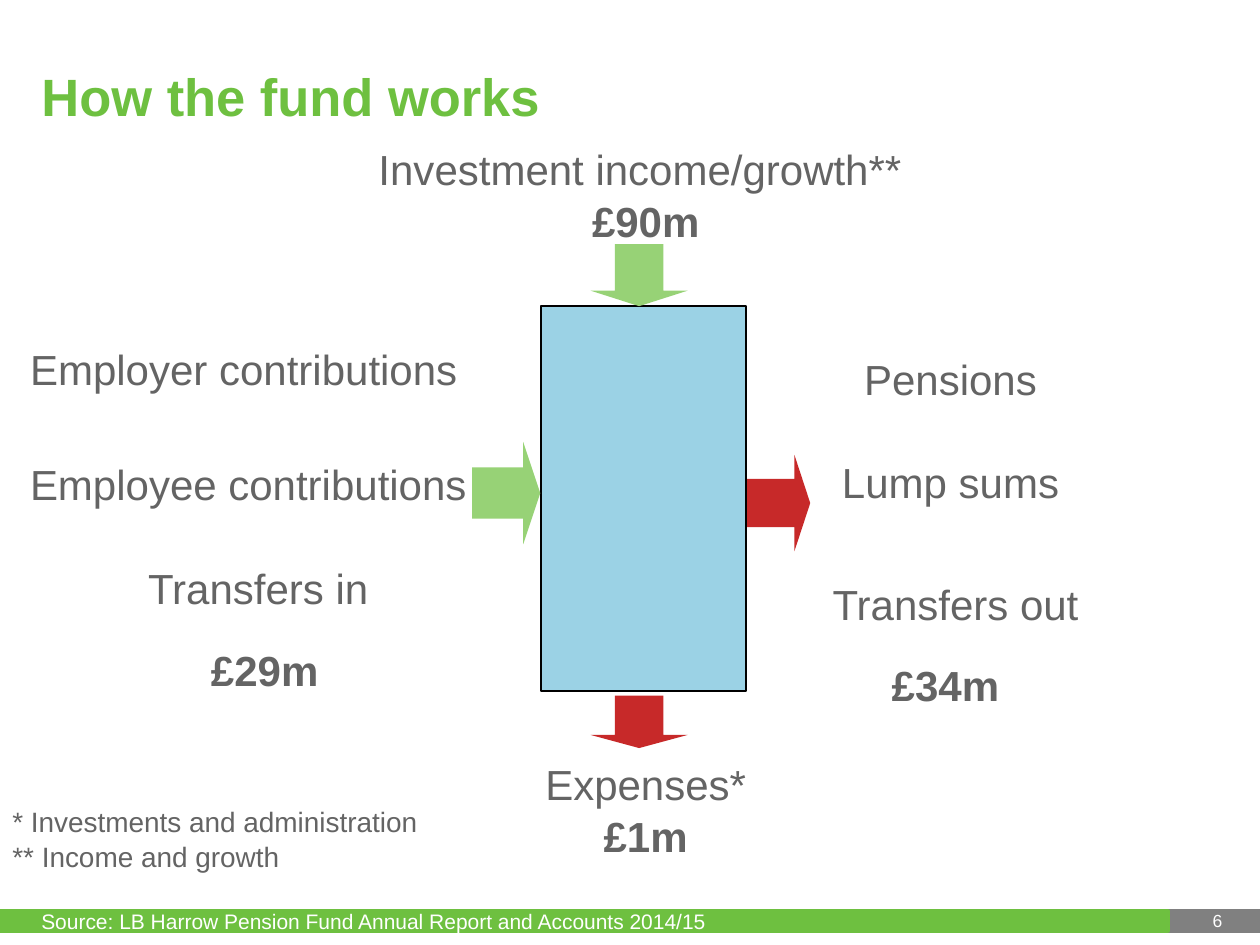
from dataclasses import dataclass

from lxml.etree import SubElement
from pptx import Presentation
from pptx.dml.color import RGBColor
from pptx.enum.shapes import MSO_SHAPE
from pptx.enum.text import MSO_ANCHOR, PP_ALIGN
from pptx.util import Pt


@dataclass(frozen=True)
class Theme:
    font: str = "Arial"
    green: str = "6EC040"
    inflow: str = "97D276"
    outflow: str = "C72929"
    fund: str = "9BD2E5"
    grey: str = "808080"
    text: str = "646464"
    white: str = "FFFFFF"
    black: str = "000000"
    title_size: int = 30
    label_size: int = 24
    note_size: int = 16
    source_size: int = 12
    number_size: int = 10


class FundSlide:
    def __init__(self, deck, theme):
        self.theme = theme
        self.slide = deck.slides.add_slide(deck.slide_layouts[5])

    def style(self, paragraph, size, color, bold=False):
        paragraph.font.name = self.theme.font
        paragraph.font.size = Pt(size)
        paragraph.font.bold = bold
        paragraph.font.color.rgb = RGBColor.from_string(color)

    def title(self, words, left, top, width, height):
        heading = self.slide.shapes.title
        heading.left, heading.top = Pt(left), Pt(top)
        heading.width, heading.height = Pt(width), Pt(height)
        heading.text_frame.text = words
        heading.text_frame.vertical_anchor = MSO_ANCHOR.MIDDLE
        paragraph = heading.text_frame.paragraphs[0]
        paragraph.alignment = PP_ALIGN.LEFT
        self.style(paragraph, self.theme.title_size, self.theme.green, True)

    def block(self, preset, left, top, width, height, fill, line=None, weight=1):
        block = self.slide.shapes.add_shape(
            preset, Pt(left), Pt(top), Pt(width), Pt(height))
        block.shadow.inherit = False
        block.fill.solid()
        block.fill.fore_color.rgb = RGBColor.from_string(fill)
        if line:
            block.line.color.rgb = RGBColor.from_string(line)
            block.line.width = Pt(weight)
        else:
            block.line.fill.background()
        return block

    def arrow(self, preset, left, top, width, height, fill):
        arrow = self.block(preset, left, top, width, height, fill)
        arrow.adjustments[0] = 0.5
        arrow.adjustments[1] = 0.25

    def label(self, lines, left, top, width, height, size=None, color=None,
              align=PP_ALIGN.CENTER, anchor=MSO_ANCHOR.TOP, gap=0):
        box = self.slide.shapes.add_textbox(Pt(left), Pt(top), Pt(width), Pt(height))
        frame = box.text_frame
        frame.word_wrap = False
        frame.vertical_anchor = anchor
        for index, words in enumerate(lines):
            paragraph = frame.add_paragraph() if index else frame.paragraphs[0]
            paragraph.text = words
            paragraph.alignment = align
            if index and gap:
                paragraph.space_before = Pt(gap)
            self.style(paragraph, size or self.theme.label_size,
                       color or self.theme.text, words.startswith("£"))


def main():
    theme = Theme()
    deck = Presentation()
    deck.slide_width, deck.slide_height = Pt(720), Pt(540)
    page = FundSlide(deck, theme)

    for left, width, color in ((660, 60, theme.grey), (0, 667.5, theme.green)):
        page.block(MSO_SHAPE.RECTANGLE, left, 520.5, width, 11.5, color, color, 2)
    page.label(["6"], 659.5, 493, 46, 42.5, theme.number_size, theme.white,
               PP_ALIGN.RIGHT, MSO_ANCHOR.BOTTOM)
    page.title("How the fund works", 16.5, 16.5, 612, 76.5)

    page.block(MSO_SHAPE.RECTANGLE, 309, 175, 117.5, 220, theme.fund, theme.black)
    for preset, left, top, width, height, color in (
        (MSO_SHAPE.DOWN_ARROW, 337.5, 139.5, 55.5, 35.5, theme.inflow),
        (MSO_SHAPE.DOWN_ARROW, 337.5, 397.5, 55.5, 30, theme.outflow),
        (MSO_SHAPE.RIGHT_ARROW, 427, 260, 36, 55, theme.outflow),
        (MSO_SHAPE.RIGHT_ARROW, 269.75, 252.5, 39, 58.5, theme.inflow),
    ):
        page.arrow(preset, left, top, width, height, color)

    for lines, left, top, width, height, gap in (
        (["Investment income/growth** ", "£90m"], 162, 78.5, 414, 65.5, 1),
        (["Employer contributions"], 8.5, 193, 261.5, 68.5, 0),
        (["Employee contributions "], 8.5, 258.5, 273.5, 68.5, 0),
        (["Transfers in"], 76.5, 318, 142, 68.5, 0),
        (["£29m"], 113, 365, 76.5, 36, 0),
        (["Pensions ", "Lump sums "], 473, 198.5, 147, 99.5, 30),
        (["Transfers out"], 468, 327, 156, 36, 0),
        (["£34m"], 502, 373.5, 76.5, 36, 0),
        (["Expenses*", "£1m"], 304, 430, 130, 65.5, 1),
    ):
        page.label(lines, left, top, width, height, gap=gap)

    page.label(["* Investments and administration", "** Income and growth"],
               0, 456, 247, 46, theme.note_size, align=PP_ALIGN.LEFT, gap=1)
    page.label(["Source: LB Harrow Pension Fund Annual Report and Accounts 2014/15"],
               16.5, 515.5, 397.5, 21.5, theme.source_size, theme.white, PP_ALIGN.LEFT)
    deck.save("out.pptx")


if __name__ == "__main__":
    main()
